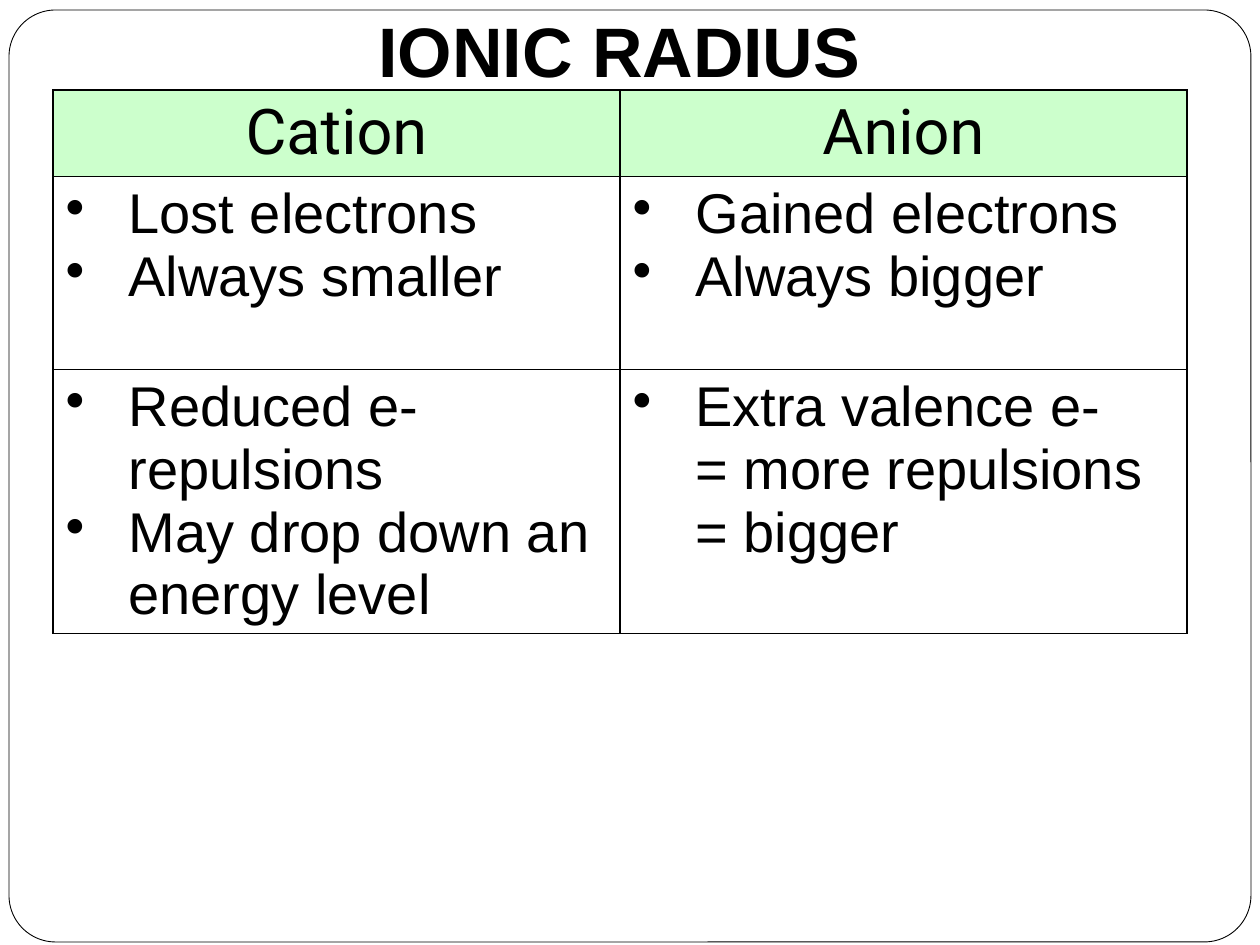
from dataclasses import dataclass

from lxml import etree
from pptx import Presentation
from pptx.dml.color import RGBColor
from pptx.enum.shapes import MSO_SHAPE
from pptx.enum.text import MSO_ANCHOR, MSO_AUTO_SIZE, PP_ALIGN
from pptx.oxml.ns import qn
from pptx.util import Emu, Pt

ROUNDED = MSO_SHAPE.ROUNDED_RECTANGLE
BOTTOM = MSO_ANCHOR.BOTTOM
CENTER, LEFT = PP_ALIGN.CENTER, PP_ALIGN.LEFT
NO_FIT = MSO_AUTO_SIZE.NONE
EMU_PER_PX = 914400 // 126


@dataclass(frozen=True)
class Theme:
    ink: RGBColor = RGBColor(0, 0, 0)
    paper: RGBColor = RGBColor(255, 255, 255)
    header: RGBColor = RGBColor(0xCC, 0xFF, 0xCC)
    body_font: str = "Arial"
    header_font: str = "Roboto"
    title_size: int = 40
    header_size: int = 36
    body_size: int = 32


THEME = Theme()
TITLE_FONT = {"name": THEME.body_font, "size": Pt(THEME.title_size), "bold": True}
HEADER_FONT = {"name": THEME.header_font, "size": Pt(THEME.header_size), "bold": False}
BODY_FONT = {"name": THEME.body_font, "size": Pt(THEME.body_size), "bold": False}

COLUMN_WIDTH = 567
ROW_HEIGHTS = [86, 193, 264]
HEADINGS = ["Cation", "Anion"]
BODY_ROWS = [
    [["Lost electrons", "Always smaller"], ["Gained electrons", "Always bigger"]],
    [["Reduced e-repulsions", "May drop down an energy level"],
     ["Extra valence e- \v= more repulsions = bigger"]],
]


def px(n):
    return Emu(n * EMU_PER_PX)


def format_paragraph(p, text, fmt, align):
    p.text = text
    p.alignment = align
    for r in p.runs:
        for name, value in fmt.items():
            setattr(r.font, name, value)
        r.font.color.rgb = THEME.ink


def add_bullet(p, indent):
    pPr = p._p.get_or_add_pPr()
    pPr.set("marL", str(indent))
    pPr.set("indent", str(-indent))
    etree.SubElement(pPr, qn("a:buChar"), char="•")


def set_borders(cell, width):
    tcPr = cell._tc.get_or_add_tcPr()
    for side in ("a:lnL", "a:lnR", "a:lnT", "a:lnB"):
        ln = etree.SubElement(tcPr, qn(side), w=str(width))
        fill = etree.SubElement(ln, qn("a:solidFill"))
        etree.SubElement(fill, qn("a:srgbClr"), val=str(THEME.ink))


def fill_header_cell(cell, text):
    set_borders(cell, Pt(1))
    cell.fill.solid()
    cell.fill.fore_color.rgb = THEME.header
    format_paragraph(cell.text_frame.paragraphs[0], text, HEADER_FONT, CENTER)


def fill_body_cell(cell, items):
    set_borders(cell, Pt(1))
    cell.fill.background()
    tf = cell.text_frame
    for i, text in enumerate(items):
        p = tf.add_paragraph() if i else tf.paragraphs[0]
        add_bullet(p, px(63))
        format_paragraph(p, text, BODY_FONT, LEFT)


def add_frame(slide):
    sp = slide.shapes.add_shape(ROUNDED, px(9), px(10), px(1242), px(932))
    sp.adjustments[0] = 0.05
    sp.shadow.inherit = False
    sp.fill.solid()
    sp.fill.fore_color.rgb = THEME.paper
    sp.line.color.rgb = THEME.ink
    sp.line.width = Pt(0.5)
    # Behind the title
    slide.shapes._spTree.insert(2, sp._element)


def set_title(slide, text):
    sp = slide.shapes.title
    sp.left, sp.top, sp.width, sp.height = px(42), px(13), px(1155), px(92)
    tf = sp.text_frame
    layout = {"word_wrap": True, "auto_size": NO_FIT, "vertical_anchor": BOTTOM,
              "margin_left": px(13), "margin_right": px(13),
              "margin_top": px(6), "margin_bottom": px(13)}
    for name, value in layout.items():
        setattr(tf, name, value)
    format_paragraph(tf.paragraphs[0], text, TITLE_FONT, CENTER)


def add_comparison(slide):
    table = slide.shapes.add_table(
        len(ROW_HEIGHTS), len(HEADINGS), px(53), px(90),
        px(COLUMN_WIDTH * len(HEADINGS)), px(sum(ROW_HEIGHTS))).table
    table.first_row = table.horz_banding = False
    for column in table.columns:
        column.width = px(COLUMN_WIDTH)
    for row, height in zip(table.rows, ROW_HEIGHTS):
        row.height = px(height)
    for c, heading in enumerate(HEADINGS):
        fill_header_cell(table.cell(0, c), heading)
    for r, row in enumerate(BODY_ROWS, start=1):
        for c, items in enumerate(row):
            fill_body_cell(table.cell(r, c), items)


def main():
    prs = Presentation()
    prs.slide_width, prs.slide_height = px(1260), px(945)
    slide = prs.slides.add_slide(prs.slide_layouts[5])
    add_frame(slide)
    set_title(slide, "IONIC RADIUS")
    add_comparison(slide)
    prs.save("out.pptx")


if __name__ == "__main__":
    main()
